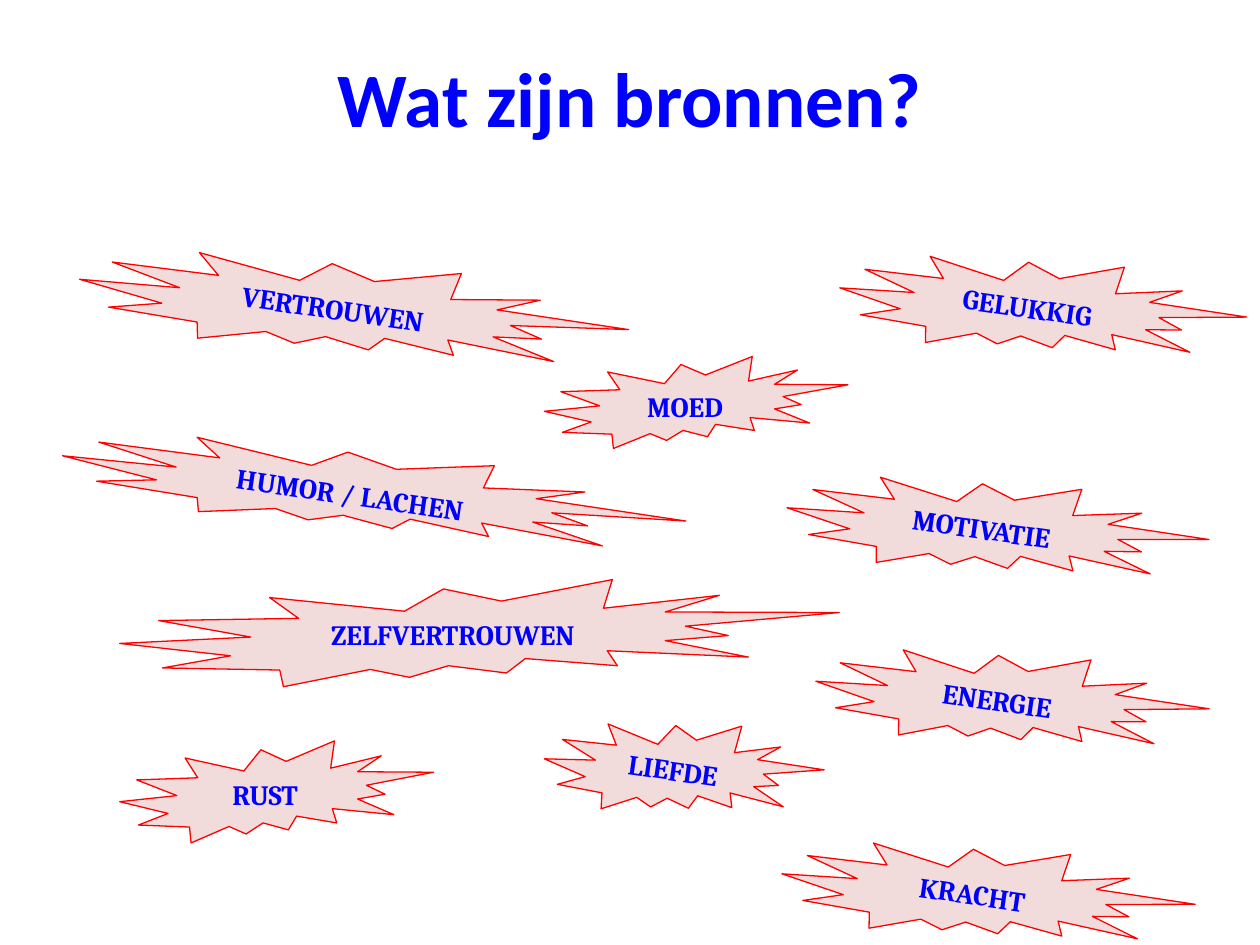
from pptx import Presentation
from pptx.dml.color import RGBColor
from pptx.enum.shapes import MSO_SHAPE
from pptx.enum.text import MSO_ANCHOR, PP_ALIGN
from pptx.util import Inches, Pt

COLUMNS, ROWS = 100, 75
TILT = 8.3

# Word, then left, top, width and height in grid units, and rotation
BURSTS = [
    ("VERTROUWEN", 6.2, 20.5, 43.7, 8.1, TILT),
    ("MOED", 43.2, 28.3, 24.1, 7.3, 0),
    ("GELUKKIG", 66.6, 20.3, 32.3, 8.2, TILT),
    ("HUMOR / LACHEN", 4.8, 35.6, 49.7, 7, TILT),
    ("MOTIVATIE", 62.4, 37.9, 33.5, 8.1, TILT),
    ("LIEFDE", 43.2, 57, 22.1, 8.1, TILT),
    ("ENERGIE", 64.7, 51.5, 31.2, 8.1, TILT),
    ("KRACHT", 62, 66.9, 32.8, 8.1, TILT),
    ("ZELFVERTROUWEN", 9.5, 46, 57.1, 8.5, 0),
    ("RUST", 9.5, 58.8, 24.9, 8.1, 0),
]


def color(value):
    return RGBColor.from_string(value)


class SlideBuilder:
    """Holds the style and the current slide."""

    text_color = "0000FF"
    fill_color = "F2DCDB"
    line_color = "FF0000"
    title_font, title_size = "Calibri", 44
    burst_font, burst_size = "Cambria", 16

    def __init__(self, deck):
        self.column = deck.slide_width / COLUMNS
        self.row = deck.slide_height / ROWS
        self.page = deck.slides.add_slide(deck.slide_layouts[6])

    def place(self, left, top, width, height):
        return (round(left * self.column), round(top * self.row),
                round(width * self.column), round(height * self.row))

    def set_text(self, shape, text, font, size, anchor):
        frame = shape.text_frame
        frame.word_wrap = True
        frame.vertical_anchor = anchor
        para = frame.paragraphs[0]
        para.text = text
        para.alignment = PP_ALIGN.CENTER
        para.font.name = font
        para.font.size = Pt(size)
        para.font.bold = True
        para.font.color.rgb = color(self.text_color)
        return para

    def title(self, text, *area):
        box = self.page.shapes.add_textbox(*self.place(*area))
        self.set_text(box, text, self.title_font, self.title_size,
                      MSO_ANCHOR.MIDDLE)

    def burst(self, text, left, top, width, height, rotation):
        shape = self.page.shapes.add_shape(
            MSO_SHAPE.EXPLOSION2, *self.place(left, top, width, height))
        shape.rotation = rotation
        shape.shadow.inherit = False
        shape.fill.solid()
        shape.fill.fore_color.rgb = color(self.fill_color)
        shape.line.color.rgb = color(self.line_color)
        shape.line.width = Pt(0.75)
        para = self.set_text(shape, text, self.burst_font, self.burst_size,
                             MSO_ANCHOR.TOP)
        para.space_after = Pt(10)


def main():
    deck = Presentation()
    deck.slide_width, deck.slide_height = Inches(10), Inches(7.5)
    builder = SlideBuilder(deck)

    # Heading
    builder.title("Wat zijn bronnen?", 5, 3, 90, 9.3)

    # Scattered sources of strength
    for burst in BURSTS:
        builder.burst(*burst)

    deck.save("out.pptx")


if __name__ == "__main__":
    main()
